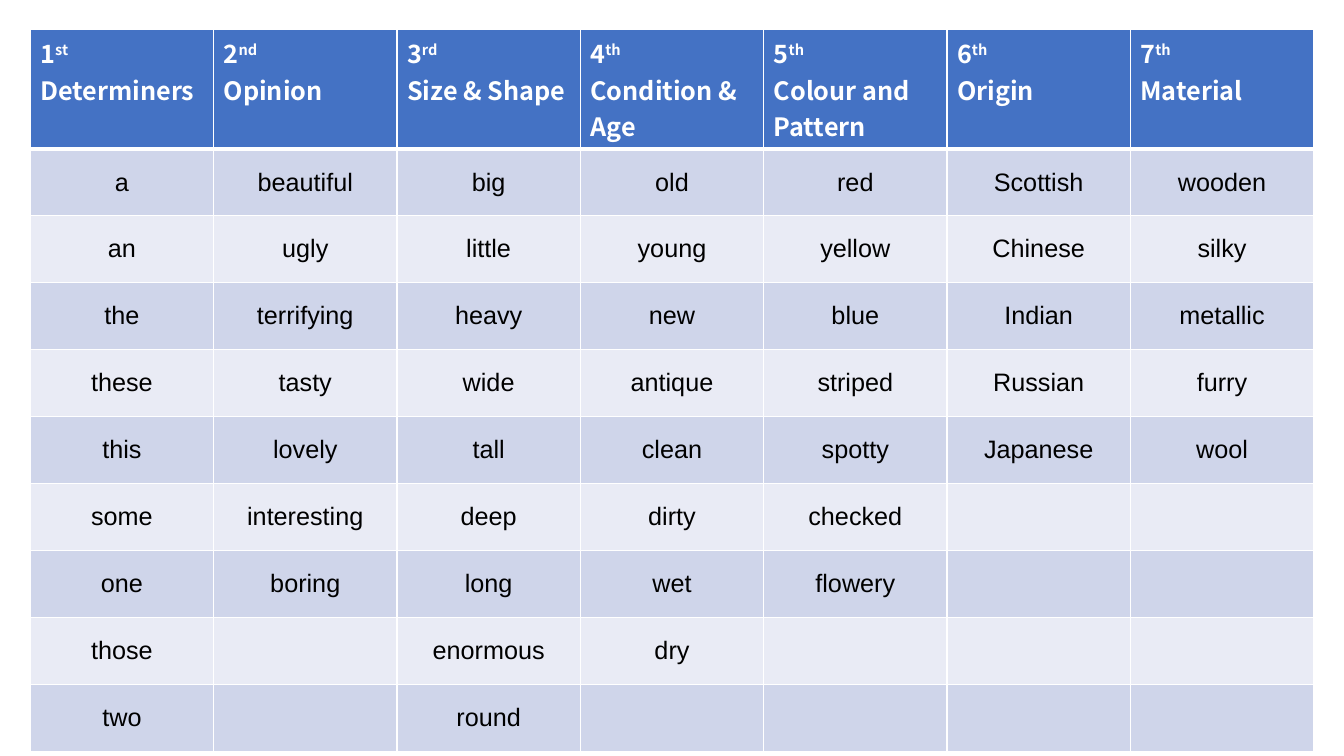
from lxml.etree import SubElement
from pptx import Presentation
from pptx.dml.color import RGBColor as RGB
from pptx.enum.text import MSO_ANCHOR as ANCHOR, PP_ALIGN as ALIGN
from pptx.oxml.ns import qn
from pptx.util import Inches, Pt

COLORS = {
    "header": "4472C4",
    "odd": "CFD5EA",
    "even": "E9EBF5",
    "border": "FFFFFF",
    "header_text": "FFFFFF",
    "body_text": "000000",
}
HEADER_FONT, BODY_FONT = "Noto Sans CJK JP", "Arial"

# Each column: ordinal suffix, heading, words from top to bottom
COLUMNS = [
    ("st", "Determiners",
     ["a", "an", "the", "these", "this", "some", "one", "those", "two"]),
    ("nd", "Opinion",
     ["beautiful", "ugly", "terrifying", "tasty", "lovely", "interesting", "boring"]),
    ("rd", "Size & Shape",
     ["big", "little", "heavy", "wide", "tall", "deep", "long", "enormous", "round"]),
    ("th", "Condition & Age",
     ["old", "young", "new", "antique", "clean", "dirty", "wet", "dry"]),
    ("th", "Colour and Pattern",
     ["red", "yellow", "blue", "striped", "spotty", "checked", "flowery"]),
    ("th", "Origin", ["Scottish", "Chinese", "Indian", "Russian", "Japanese"]),
    ("th", "Material", ["wooden", "silky", "metallic", "furry", "wool"]),
]
WORD_ROWS = max(len(words) for _, _, words in COLUMNS)

# Table grid in inches
LEFT, TOP, WIDTH, HEIGHT = 0.3, 0.29, 12.73, 6.93
HEADER_H = 0.95
ROW_H = (HEIGHT - HEADER_H) / WORD_ROWS


def add_run(p, text, font, color, bold=False, baseline=None):
    r = p.add_run()
    r.text = text
    r.font.size = Pt(18)
    r.font.name = font
    r.font.bold = bold
    r.font.color.rgb = RGB.from_string(COLORS[color])
    if baseline:
        r.font._element.set("baseline", str(baseline * 1000))


def style_cell(cell, fill, top=1, bottom=1):
    """Draw the four borders, then the fill."""
    tc_pr = cell._tc.get_or_add_tcPr()
    for side, width in (("L", 1), ("R", 1), ("T", top), ("B", bottom)):
        ln = SubElement(tc_pr, qn(f"a:ln{side}"), w=str(Pt(width)))
        solid = SubElement(ln, qn("a:solidFill"))
        SubElement(solid, qn("a:srgbClr"), val=COLORS["border"])
    cell.fill.solid()
    cell.fill.fore_color.rgb = RGB.from_string(COLORS[fill])


def fill_header(cell, number, suffix, heading):
    style_cell(cell, "header", bottom=3)
    tf = cell.text_frame
    p = tf.paragraphs[0]
    add_run(p, str(number), HEADER_FONT, "header_text", bold=True)
    add_run(p, suffix, HEADER_FONT, "header_text", bold=True, baseline=30)
    add_run(tf.add_paragraph(), heading, HEADER_FONT, "header_text", bold=True)


def fill_word(cell, row, word):
    style_cell(cell, "odd" if row % 2 else "even", top=3 if row == 1 else 1)
    if word:
        cell.vertical_anchor = ANCHOR.MIDDLE
        p = cell.text_frame.paragraphs[0]
        p.alignment = ALIGN.CENTER
        add_run(p, word, BODY_FONT, "body_text")


def add_word_table(s):
    table = s.shapes.add_table(
        WORD_ROWS + 1, len(COLUMNS),
        Inches(LEFT), Inches(TOP), Inches(WIDTH), Inches(HEIGHT)).table
    for i, row in enumerate(table.rows):
        row.height = Inches(ROW_H if i else HEADER_H)
    for col, (suffix, heading, words) in enumerate(COLUMNS):
        table.columns[col].width = Inches(WIDTH / len(COLUMNS))
        fill_header(table.cell(0, col), col + 1, suffix, heading)
        for row in range(1, WORD_ROWS + 1):
            word = words[row - 1] if row <= len(words) else ""
            fill_word(table.cell(row, col), row, word)


def main():
    prs = Presentation()
    prs.slide_width, prs.slide_height = Inches(13.33), Inches(7.5)
    s = prs.slides.add_slide(prs.slide_layouts[6])
    add_word_table(s)
    prs.save("out.pptx")


if __name__ == "__main__":
    main()
